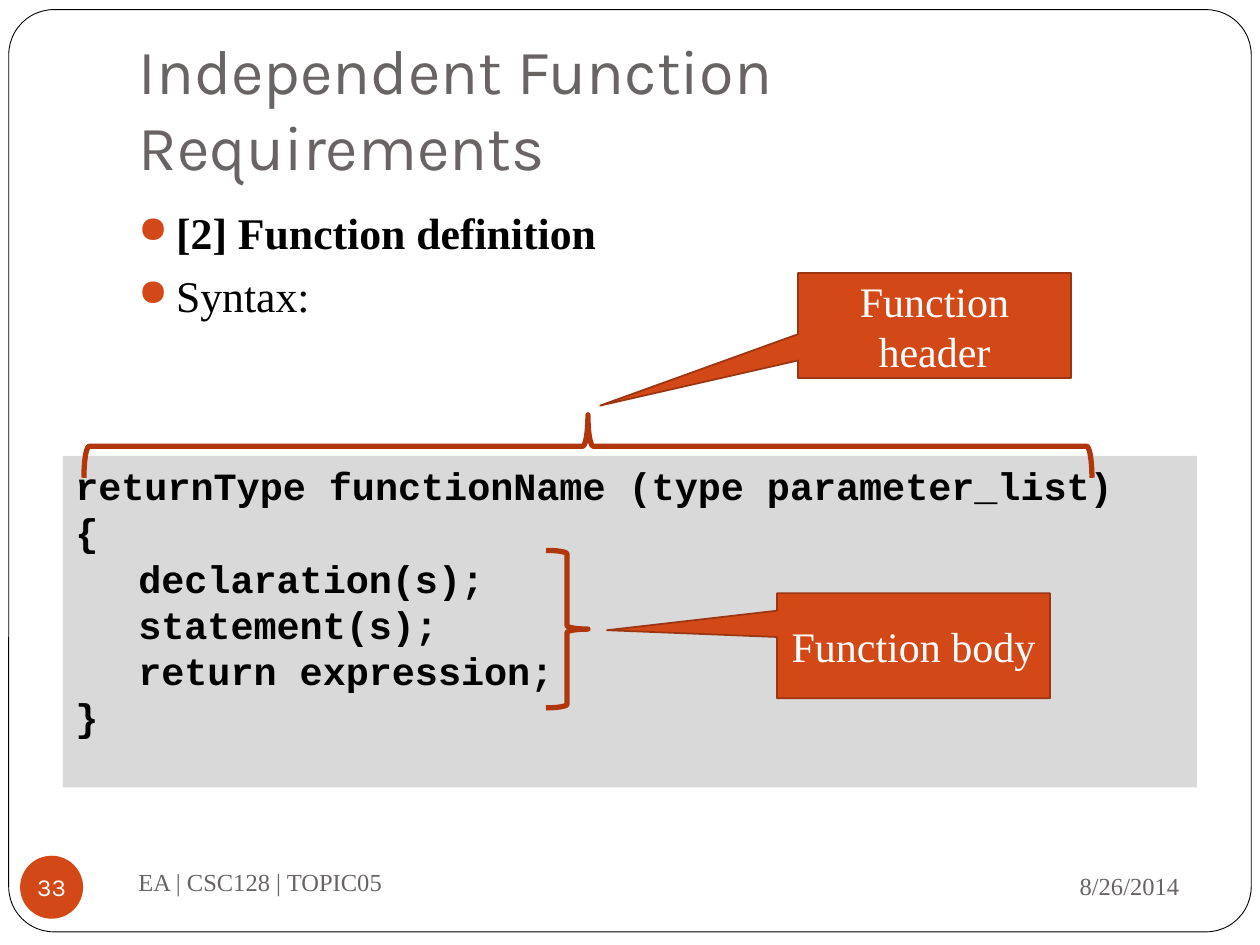
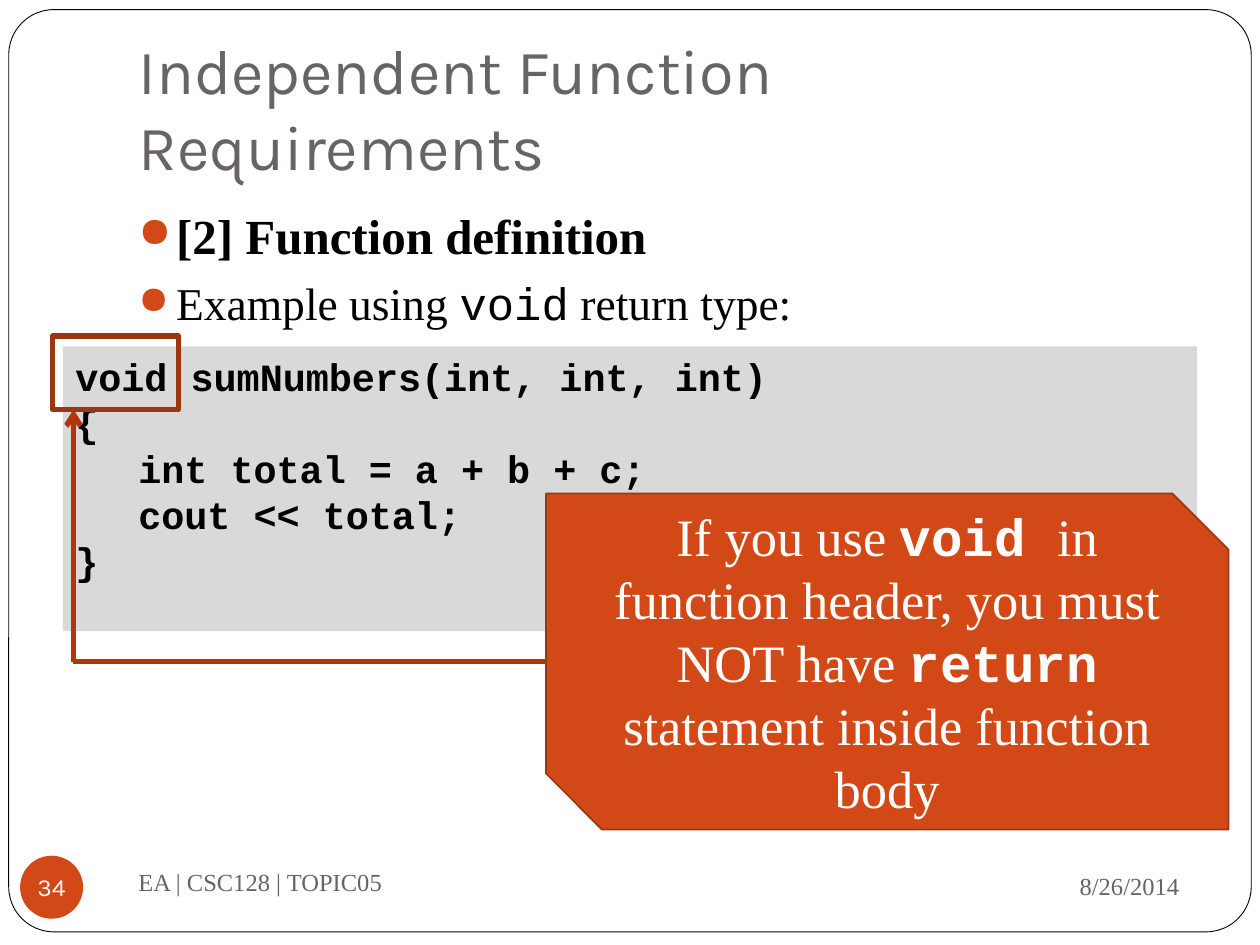
from lxml import etree
from pptx import Presentation
from pptx.dml.color import RGBColor
from pptx.enum.shapes import MSO_CONNECTOR, MSO_SHAPE as SHAPE
from pptx.enum.text import MSO_ANCHOR as ANCHOR, MSO_AUTO_SIZE, PP_ALIGN as ALIGN
from pptx.oxml.ns import qn
from pptx.util import Pt

rgb = RGBColor.from_string
ORANGE, EDGE, BRACE = "D34817", "9C3511", "B1360B"
BLACK, WHITE, GRAY, PANEL = "000000", "FFFFFF", "696464", "D9D9D9"
SERIF, MONO, SANS = "Times New Roman", "Courier New", "Karla"


def write(shape, paras, size, font=SERIF, color=BLACK, bold=False, align=ALIGN.LEFT,
          anchor=ANCHOR.TOP, insets=(7.2, 3.6, 7.2, 3.6), wrap=True, bullets=False):
    """Each paragraph is a string or a list of (text, run format) pairs;
    a leading tab in a string indents the paragraph."""
    tf = shape.text_frame
    tf.auto_size, tf.word_wrap, tf.vertical_anchor = MSO_AUTO_SIZE.NONE, wrap, anchor
    tf.margin_left, tf.margin_top, tf.margin_right, tf.margin_bottom = map(Pt, insets)
    for i, runs in enumerate(paras):
        p = tf.paragraphs[0] if i == 0 else tf.add_paragraph()
        p.alignment = align
        pPr = p._p.get_or_add_pPr()
        if isinstance(runs, str):
            if runs.startswith("\t"):
                pPr.set("marL", str(Pt(36)))
            runs = [(runs.lstrip("\t"), {})]
        if bullets:
            p.space_before = Pt(5.8)
            pPr.set("marL", str(Pt(21.6)))
            pPr.set("indent", str(-Pt(21.6)))
            bu_color = etree.SubElement(pPr, qn("a:buClr"))
            etree.SubElement(bu_color, qn("a:srgbClr"), val=ORANGE)
            etree.SubElement(pPr, qn("a:buSzPct"), val="85000")
            etree.SubElement(pPr, qn("a:buChar"), char="●")
        for text, fmt in runs:
            r = p.add_run()
            r.text = text
            r.font.name = fmt.get("font", font)
            r.font.size = Pt(fmt.get("size", size))
            r.font.bold = fmt.get("bold", bold)
            r.font.color.rgb = rgb(color)


def draw(s, kind, box, fill=None, line=None, width=1, adj=()):
    sp = s.shapes.add_shape(kind, *map(Pt, box))
    sp.shadow.inherit = False
    if fill:
        sp.fill.solid()
        sp.fill.fore_color.rgb = rgb(fill)
    else:
        sp.fill.background()
    if line:
        sp.line.color.rgb = rgb(line)
        sp.line.width = Pt(width)
    else:
        sp.line.fill.background()
    for i, value in enumerate(adj):
        sp.adjustments[i] = value
    return sp


prs = Presentation()
prs.slide_width, prs.slide_height = Pt(720), Pt(540)

# Content: page number, bullets, code panel top and height, code lines
pages = [
    (33,
     [[("[2] Function definition", {"bold": True})], "Syntax:"], 25,
     260.6, 189.4,
     ["returnType functionName (type parameter_list)", "{", "\tdeclaration(s);",
      "\tstatement(s);", "\treturn expression;", "}"]),
    (34,
     [[("[2] Function definition", {"bold": True, "size": 28})],
      [("Example using ", {}), ("void", {"font": MONO}), (" return type:", {})]], 26,
     198, 162.7,
     ["void sumNumbers(int, int, int)", "{", "\tint total = a + b + c;",
      "\tcout << total;", "}"]),
]

# Parts that both slides share
slides = []
for number, bullets, bullet_size, code_top, code_height, code in pages:
    s = prs.slides.add_slide(prs.slide_layouts[5])
    slides.append(s)

    # Page frame, behind the title
    frame = draw(s, SHAPE.ROUNDED_RECTANGLE, (5, 5.5, 710, 527), WHITE, BLACK, 0.5, [0.049])
    s.shapes.element.insert(2, frame.element)

    title = s.shapes.title
    title.left, title.top, title.width, title.height = Pt(72), Pt(21.6), Pt(612), Pt(90)
    write(title, ["Independent Function Requirements"], 36, SANS, GRAY,
          anchor=ANCHOR.BOTTOM, insets=(7.2, 3.6, 7.2, 7.2))

    # Footer
    for text, box, align in [("8/26/2014", (486, 487.5, 195, 37.5), ALIGN.RIGHT),
                             ("EA | CSC128 | TOPIC05", (72, 486, 312, 36), ALIGN.LEFT)]:
        write(s.shapes.add_textbox(*map(Pt, box)), [text], 14, color=GRAY,
              align=align, anchor=ANCHOR.MIDDLE)
    badge = draw(s, SHAPE.OVAL, (11.5, 489, 36, 36), ORANGE)
    write(badge, [str(number)], 14, SANS, WHITE, align=ALIGN.CENTER,
          anchor=ANCHOR.MIDDLE, insets=(0, 0, 0, 0), wrap=False)

    # Bullets and code panel
    body = s.shapes.add_textbox(Pt(72), Pt(114), Pt(612), Pt(360))
    write(body, bullets, bullet_size, bullets=True)
    panel = draw(s, SHAPE.RECTANGLE, (36, code_top, 648, code_height), PANEL)
    write(panel, code, 22, MONO, bold=True)

# Slide 33: braces and callouts
s = slides[0]
draw(s, SHAPE.RIGHT_BRACE, (312, 314.5, 24, 90), line=BRACE, width=3)
header_brace = draw(s, SHAPE.RIGHT_BRACE, (318, -33, 36, 576), line=BRACE, width=3)
header_brace.rotation = 270
for text, left, top, tip in [("Function body", 444, 339, (-1.123, -0.148)),
                             ("Function header", 456, 156, (-1.225, 0.763))]:
    callout = draw(s, SHAPE.RECTANGULAR_CALLOUT, (left, top, 156, 60), ORANGE, EDGE, adj=tip)
    write(callout, [text], 24, color=WHITE, align=ALIGN.CENTER, anchor=ANCHOR.MIDDLE)

# Slide 34: note on void, with a marker around the keyword
s = slides[1]
note = draw(s, SHAPE.SNIP_2_DIAG_RECTANGLE, (312, 282, 390, 192), ORANGE, EDGE)
keyword = {"font": MONO, "bold": True}
write(note, [[("If you use ", {}), ("void ", keyword),
              ("in function header, you must NOT have ", {}), ("return", keyword),
              (" statement inside function body", {})]],
      30, color=WHITE, align=ALIGN.CENTER, anchor=ANCHOR.MIDDLE)
draw(s, SHAPE.RECTANGLE, (30, 192, 72, 42), line=EDGE, width=3)

# Path from the note up to the marker, with an arrowhead on its last part
path_points = [(312, 378), (42, 378), (42, 234)]
for start, end in zip(path_points, path_points[1:]):
    link = s.shapes.add_connector(MSO_CONNECTOR.STRAIGHT, *map(Pt, start + end))
    link.line.color.rgb = rgb(BRACE)
    link.line.width = Pt(3)
    etree.SubElement(link.element.spPr, qn("a:effectLst"))
etree.SubElement(link.line._get_or_add_ln(), qn("a:tailEnd"), type="arrow")

prs.save("out.pptx")
